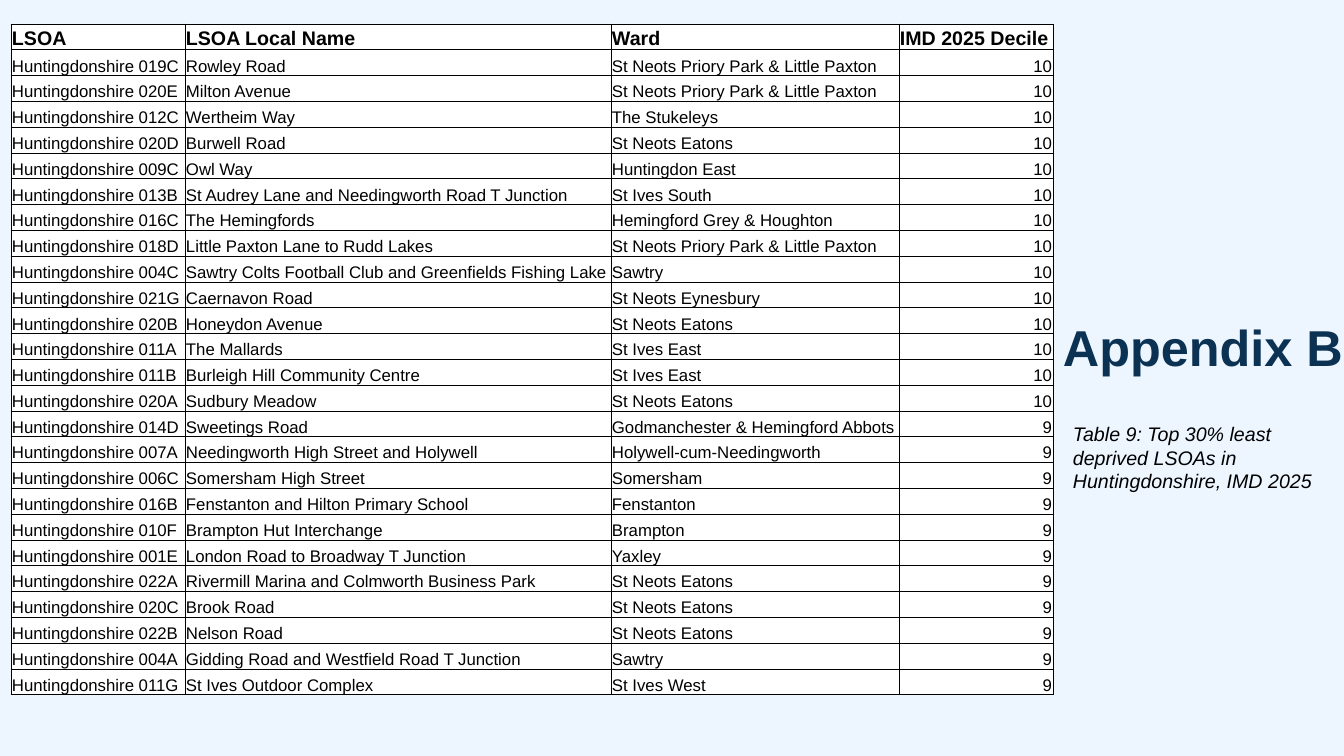
from lxml import etree
from pptx import Presentation
from pptx import util as u
from pptx.dml.color import RGBColor
from pptx.enum import text
from pptx.oxml import ns

SCALE = 914400 / 100.8
FONT = "Arial"
PALE = RGBColor(0xED, 0xF6, 0xFF)
NAVY = RGBColor(0x0B, 0x31, 0x53)
BLACK = RGBColor(0, 0, 0)
WHITE = RGBColor(0xFF, 0xFF, 0xFF)

HEAD = ("LSOA", "LSOA Local Name", "Ward", "IMD 2025 Decile")
AREA = "Huntingdonshire"
WIDTHS = (174, 426, 288, 154)
# Code, local name and ward, grouped by decile
DECILES = {
    10: [
        ("019C", "Rowley Road", "St Neots Priory Park & Little Paxton"),
        ("020E", "Milton Avenue", "St Neots Priory Park & Little Paxton"),
        ("012C", "Wertheim Way", "The Stukeleys"),
        ("020D", "Burwell Road", "St Neots Eatons"),
        ("009C", "Owl Way", "Huntingdon East"),
        ("013B", "St Audrey Lane and Needingworth Road T Junction", "St Ives South"),
        ("016C", "The Hemingfords", "Hemingford Grey & Houghton"),
        ("018D", "Little Paxton Lane to Rudd Lakes", "St Neots Priory Park & Little Paxton"),
        ("004C", "Sawtry Colts Football Club and Greenfields Fishing Lake", "Sawtry"),
        ("021G", "Caernavon Road", "St Neots Eynesbury"),
        ("020B", "Honeydon Avenue", "St Neots Eatons"),
        ("011A", "The Mallards", "St Ives East"),
        ("011B", "Burleigh Hill Community Centre", "St Ives East"),
        ("020A", "Sudbury Meadow", "St Neots Eatons"),
    ],
    9: [
        ("014D", "Sweetings Road", "Godmanchester & Hemingford Abbots"),
        ("007A", "Needingworth High Street and Holywell", "Holywell-cum-Needingworth"),
        ("006C", "Somersham High Street", "Somersham"),
        ("016B", "Fenstanton and Hilton Primary School", "Fenstanton"),
        ("010F", "Brampton Hut Interchange", "Brampton"),
        ("001E", "London Road to Broadway T Junction", "Yaxley"),
        ("022A", "Rivermill Marina and Colmworth Business Park", "St Neots Eatons"),
        ("020C", "Brook Road", "St Neots Eatons"),
        ("022B", "Nelson Road", "St Neots Eatons"),
        ("004A", "Gidding Road and Westfield Road T Junction", "Sawtry"),
        ("011G", "St Ives Outdoor Complex", "St Ives West"),
    ],
}


def px(n):
    return u.Emu(round(n * SCALE))


def style(para, size, color, bold=False, italic=False):
    font = para.font
    font.name, font.size = FONT, u.Pt(size)
    font.bold, font.italic = bold, italic
    font.color.rgb = color


def border(cell):
    props = cell._tc.get_or_add_tcPr()
    for side in "LRTB":
        line = etree.SubElement(props, ns.qn(f"a:ln{side}"), w=str(u.Pt(0.5)))
        fill = etree.SubElement(line, ns.qn("a:solidFill"))
        etree.SubElement(fill, ns.qn("a:srgbClr"), val=str(BLACK))


def fill_cell(cell, value, head):
    border(cell)
    cell.fill.solid()
    cell.fill.fore_color.rgb = WHITE
    cell.margin_left = cell.margin_right = cell.margin_top = px(1)
    cell.margin_bottom = 0
    cell.vertical_anchor = text.MSO_ANCHOR.BOTTOM
    para = cell.text_frame.paragraphs[0]
    para.text = str(value)
    if isinstance(value, int):
        para.alignment = text.PP_ALIGN.RIGHT
    style(para, 14 if head else 12, BLACK, bold=head)


def add_ranks(slide, x, y, w, h):
    rows = [HEAD] + [
        (f"{AREA} {code}", name, ward, decile)
        for decile, group in DECILES.items()
        for code, name, ward in group
    ]
    table = slide.shapes.add_table(len(rows), len(HEAD), px(x), px(y), px(w), px(h)).table
    for col, part in zip(table.columns, WIDTHS):
        col.width = px(w * part / sum(WIDTHS))
    for r, row in enumerate(rows):
        table.rows[r].height = px(h / len(rows))
        for c, value in enumerate(row):
            fill_cell(table.cell(r, c), value, r == 0)


def add_text(slide, x, y, w, h, words):
    frame = slide.shapes.add_textbox(px(x), px(y), px(w), px(h)).text_frame
    frame.word_wrap = True
    frame.paragraphs[0].text = words
    return frame


def add_side(slide, x, y, w, h):
    # Title
    title = add_text(slide, x, y, w, 94, "Appendix B")
    title.margin_left = title.margin_right = title.margin_top = title.margin_bottom = 0
    para = title.paragraphs[0]
    para.line_spacing = 0.9
    para.space_after = u.Pt(6)
    style(para, 36, NAVY, bold=True)

    # Table caption
    note = add_text(slide, x, y + 94, w - 26, h - 94,
                    "Table 9: Top 30% least deprived LSOAs in Huntingdonshire, IMD 2025")
    note.auto_size = text.MSO_AUTO_SIZE.SHAPE_TO_FIT_TEXT
    style(note.paragraphs[0], 14, BLACK, italic=True)


def main():
    deck = Presentation()
    deck.slide_width, deck.slide_height = px(1344), px(756)
    slide = deck.slides.add_slide(deck.slide_layouts[6])
    back = slide.background.fill
    back.solid()
    back.fore_color.rgb = PALE
    add_ranks(slide, 11, 24, 1042, 671)
    add_side(slide, 1063, 323, 296, 176)
    deck.save("out.pptx")


if __name__ == "__main__":
    main()
